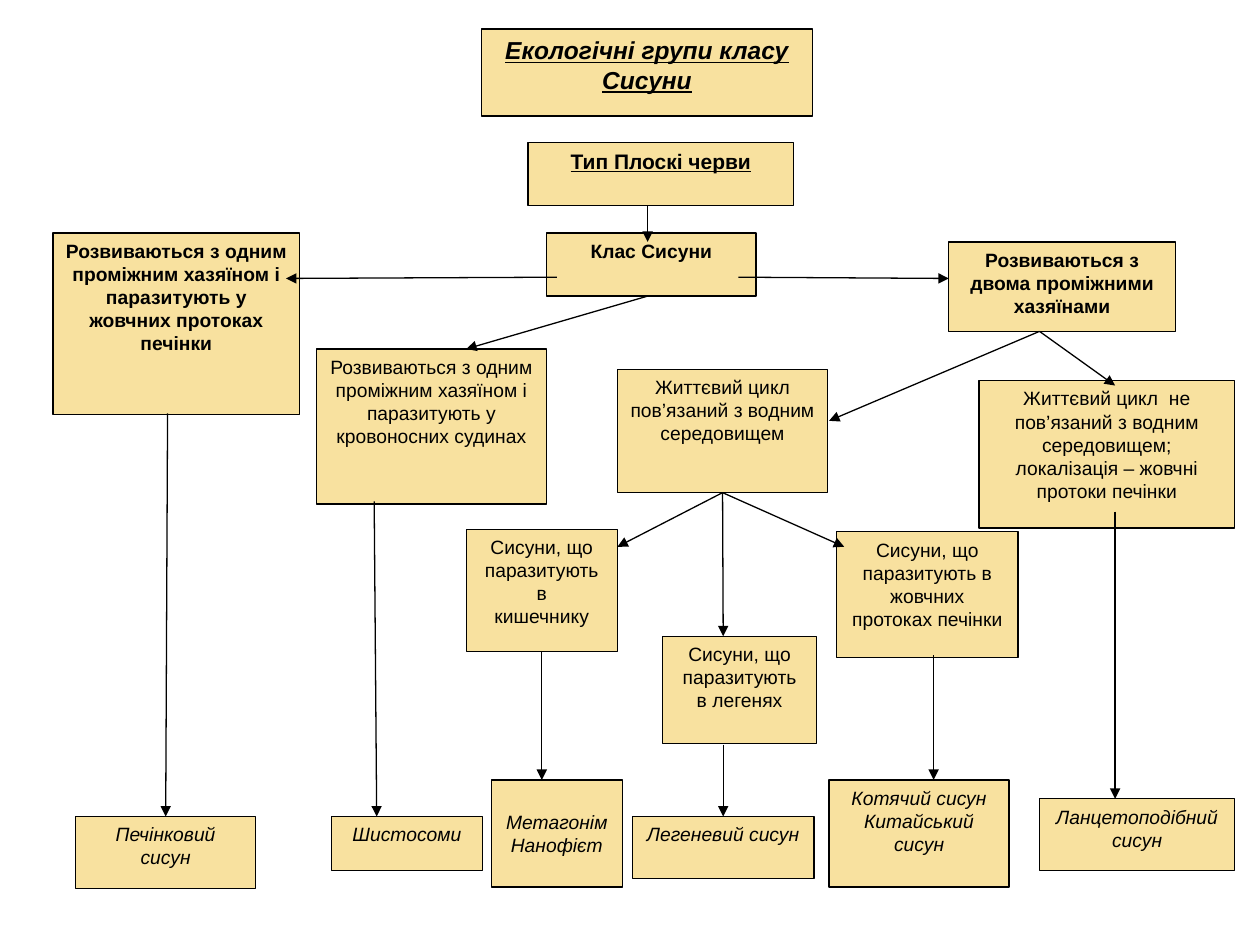
from dataclasses import dataclass
from typing import Union

from lxml import etree
from pptx import Presentation
from pptx.dml.color import RGBColor
from pptx.enum.shapes import MSO_CONNECTOR, MSO_SHAPE
from pptx.enum.text import MSO_ANCHOR, MSO_AUTO_SIZE, PP_ALIGN
from pptx.oxml.ns import qn
from pptx.util import Inches, Pt

RECT = MSO_SHAPE.RECTANGLE
STRAIGHT = MSO_CONNECTOR.STRAIGHT
CENTER = PP_ALIGN.CENTER
TOP, MIDDLE = MSO_ANCHOR.TOP, MSO_ANCHOR.MIDDLE
NO_AUTOFIT = MSO_AUTO_SIZE.NONE

SAND = RGBColor(0xF8, 0xE1, 0x9F)
BLACK = RGBColor(0, 0, 0)
FONT = "Arial"
LINE_WIDTH = Pt(0.75)
COLUMNS, ROWS = 100, 75
CELL = Inches(10) / COLUMNS
TOP_SIDE, BOTTOM_SIDE = 0, 2


@dataclass
class Box:
    """A labelled rectangle; col, row, cols and rows count grid cells."""
    name: str
    col: float
    row: float
    cols: float
    rows: float
    text: str
    style: str = ""  # any of b, i, u
    size: int = 11
    anchor: MSO_ANCHOR = TOP


@dataclass
class Joint:
    """The middle of one side of a named box."""
    box: str
    side: int


End = Union[tuple[float, float], Joint]

TITLE = Box("title", 38.2, 2.3, 26.3, 6.9, "Екологічні групи класу Сисуни", "biu", 14)

BOXES = [
    Box("phylum", 41.9, 11.3, 21.1, 5, "Тип Плоскі черви", "bu", 12),
    Box("class", 43.4, 18.5, 16.6, 5, "Клас Сисуни", "b"),
    Box("bile one host", 4.2, 18.5, 19.6, 14.4,
        "Розвиваються з одним проміжним хазяїном і паразитують у жовчних протоках печінки", "b"),
    Box("blood one host", 25.1, 27.7, 18.3, 12.3,
        "Розвиваються з одним проміжним хазяїном і паразитують у кровоносних судинах"),
    Box("two hosts", 75.3, 19.2, 18, 7.1, "Розвиваються з двома проміжними хазяїнами", "b"),
    Box("water", 49, 29.3, 16.7, 9.8, "Життєвий цикл пов’язаний з водним середовищем"),
    Box("no water", 77.7, 30.2, 20.3, 11.7,
        "Життєвий цикл  не пов’язаний з водним середовищем; локалізація – жовчні протоки печінки"),
    Box("gut", 37, 42, 12, 9.7, "Сисуни, що паразитують в\nкишечнику"),
    Box("lungs", 52.6, 50.5, 12.2, 8.5, "Сисуни, що паразитують в легенях"),
    Box("bile", 66.4, 42.2, 14.4, 10, "Сисуни, що паразитують в жовчних протоках печінки"),
    Box("liver fluke", 6, 64.8, 14.3, 5.7, "Печінковий сисун", "i"),
    Box("schistosomes", 26.3, 64.8, 12, 4.3, "Шистосоми", "i"),
    Box("gut flukes", 39, 61.9, 10.4, 8.5, "Метагонім\nНанофієт", "i", anchor=MIDDLE),
    Box("lung fluke", 50.2, 64.8, 14.4, 4.9, "Легеневий сисун", "i"),
    Box("bile flukes", 65.8, 61.9, 14.3, 8.5, "Котячий сисун\nКитайський сисун", "i"),
    Box("lancet fluke", 82.5, 63.4, 15.5, 5.7, "Ланцетоподібний сисун", "i"),
]

WATER_BOTTOM = Joint("water", BOTTOM_SIDE)
TWO_HOSTS_BOTTOM = (82.5, 26.3)

ARROWS: list[tuple[End, End]] = [
    ((51.4, 16.3), (51.4, 19.2)),
    ((44.2, 22), (22.7, 22.1)),
    ((51.4, 23.5), (37, 27.7)),
    ((58.6, 22), (75.3, 22.1)),
    ((13.3, 32.8), Joint("liver fluke", TOP_SIDE)),
    ((29.7, 39.8), (29.9, 64.8)),
    (TWO_HOSTS_BOTTOM, (65.8, 33.4)),
    (TWO_HOSTS_BOTTOM, (88.5, 30.6)),
    (WATER_BOTTOM, (49, 43.4)),
    (WATER_BOTTOM, (67, 43.4)),
    (WATER_BOTTOM, (57.4, 50.5)),
    (Joint("gut", BOTTOM_SIDE), (43, 61.9)),
    ((57.4, 59.1), Joint("lung fluke", TOP_SIDE)),
    ((74.1, 52), (74.1, 61.9)),
    ((88.5, 40.6), (88.5, 63.4)),
    ((69.3, 52), (69.3, 52)),
]


def cells(count: float) -> int:
    return round(count * CELL)


def format_box(sp, box: Box) -> None:
    sp.left, sp.top = cells(box.col), cells(box.row)
    sp.width, sp.height = cells(box.cols), cells(box.rows)
    sp.fill.solid()
    sp.fill.fore_color.rgb = SAND
    sp.line.color.rgb = BLACK
    sp.line.width = LINE_WIDTH
    tf = sp.text_frame
    tf.text = box.text
    tf.word_wrap = True
    tf.auto_size = NO_AUTOFIT
    tf.vertical_anchor = box.anchor
    for p in tf.paragraphs:
        p.alignment = CENTER
        for r in p.runs:
            r.font.name = FONT
            r.font.size = Pt(box.size)
            r.font.color.rgb = BLACK
            r.font.bold = "b" in box.style
            r.font.italic = "i" in box.style
            r.font.underline = "u" in box.style


def add_box(slide, box: Box):
    sp = slide.shapes.add_shape(RECT, 0, 0, 0, 0)
    sp.shadow.inherit = False
    format_box(sp, box)
    return sp


def add_arrow(slide, start: End, end: End, shapes: dict) -> None:
    points = [(0, 0) if isinstance(e, Joint) else e for e in (start, end)]
    line = slide.shapes.add_connector(STRAIGHT, *(cells(v) for point in points for v in point))
    if isinstance(start, Joint):
        line.begin_connect(shapes[start.box], start.side)
    if isinstance(end, Joint):
        line.end_connect(shapes[end.box], end.side)
    line.line.color.rgb = BLACK
    line.line.width = LINE_WIDTH
    etree.SubElement(line.line._get_or_add_ln(), qn("a:tailEnd"), type="triangle")
    etree.SubElement(line._element.spPr, qn("a:effectLst"))


def main() -> None:
    prs = Presentation()
    prs.slide_width, prs.slide_height = cells(COLUMNS), cells(ROWS)
    slide = prs.slides.add_slide(prs.slide_layouts.get_by_name("Title Only"))
    format_box(slide.shapes.title, TITLE)
    shapes = {box.name: add_box(slide, box) for box in BOXES}
    for start, end in ARROWS:
        add_arrow(slide, start, end, shapes)
    prs.save("out.pptx")


if __name__ == "__main__":
    main()
